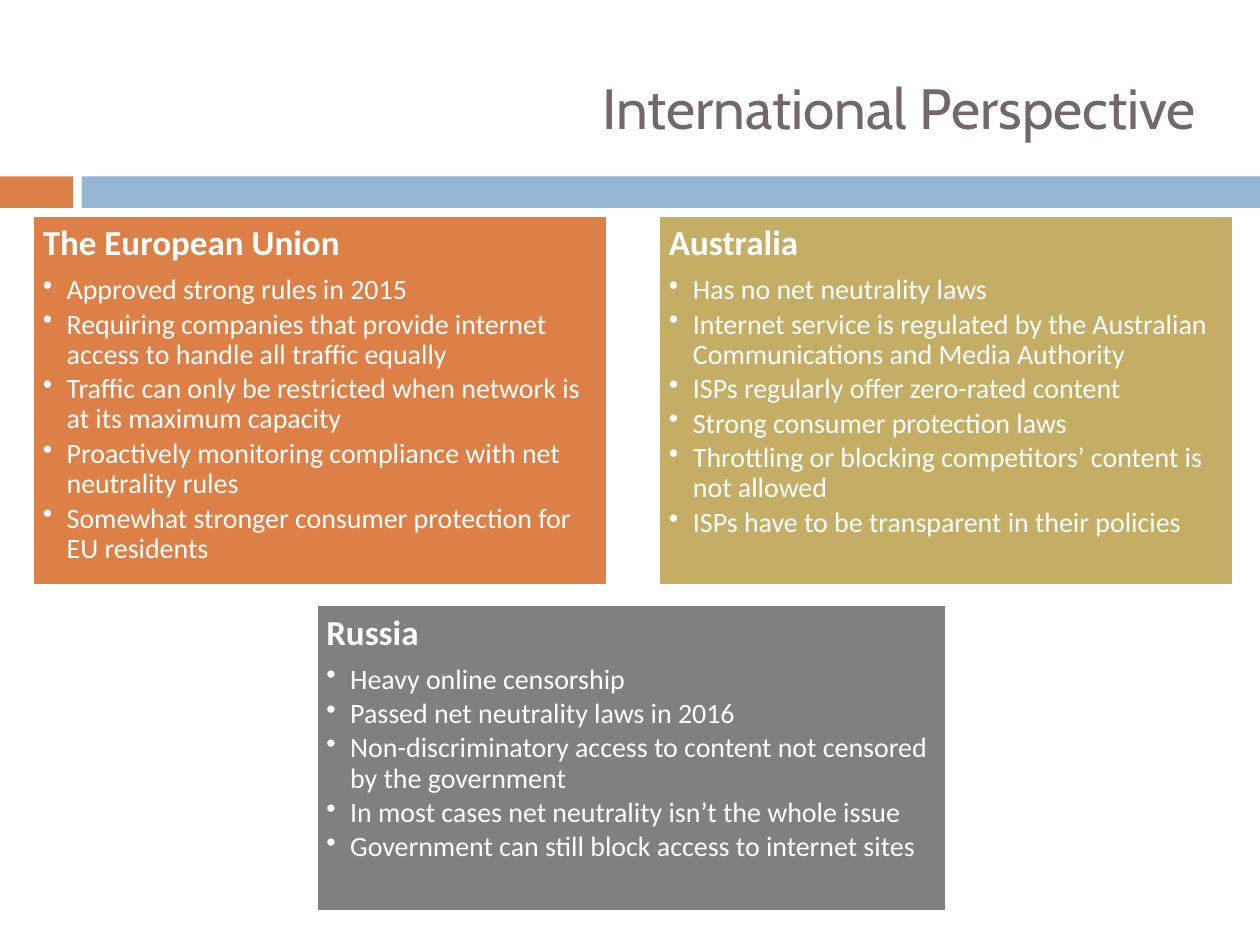
from lxml.etree import SubElement
from pptx import Presentation
from pptx.dml.color import RGBColor
from pptx.enum.shapes import MSO_SHAPE as Shape
from pptx.enum.text import MSO_ANCHOR as Anchor, PP_ALIGN as Align
from pptx.oxml.ns import qn
from pptx.util import Inches, Pt

WHITE = RGBColor(0xFF, 0xFF, 0xFF)
ORANGE = RGBColor(0xDD, 0x80, 0x47)
BLUE = RGBColor(0x94, 0xB6, 0xD2)
GOLD = RGBColor(0xC4, 0xAD, 0x64)
GRAY = RGBColor(0x80, 0x80, 0x80)
TITLE_COLOR = RGBColor(0x72, 0x68, 0x68)

BULLET_INDENT = Inches(0.19)
PANEL_INSET = Inches(0.08)

# Heading, fill, (left, top, width, height) in inches, bullets
REGIONS = [
    ("The European Union", ORANGE, (0.26, 1.71, 4.56, 2.94), [
        "Approved strong rules in 2015",
        "Requiring companies that provide internet access to handle all traffic equally",
        "Traffic can only be restricted when network is at its maximum capacity",
        "Proactively monitoring compliance with net neutrality rules",
        "Somewhat stronger consumer protection for EU residents",
    ]),
    ("Australia", GOLD, (5.23, 1.71, 4.56, 2.94), [
        "Has no net neutrality laws",
        "Internet service is regulated by the Australian Communications and Media Authority",
        "ISPs regularly offer zero-rated content",
        "Strong consumer protection laws",
        "Throttling or blocking competitors’ content is not allowed",
        "ISPs have to be transparent in their policies",
    ]),
    ("Russia", GRAY, (2.51, 4.8, 5, 2.43), [
        "Heavy online censorship",
        "Passed net neutrality laws in 2016",
        "Non-discriminatory access to content not censored by the government",
        "In most cases net neutrality isn’t the whole issue",
        "Government can still block access to internet sites",
    ]),
]


def add_rectangle(slide, box, fill):
    shape = slide.shapes.add_shape(Shape.RECTANGLE, *map(Inches, box))
    shape.shadow.inherit = False
    shape.fill.solid()
    shape.fill.fore_color.rgb = fill
    shape.line.fill.background()
    return shape


def write_paragraph(paragraph, text, font_name, size, color, bold=False):
    paragraph.text = text
    font = paragraph.runs[0].font
    font.name = font_name
    font.size = Pt(size)
    font.color.rgb = color
    font.bold = bold


def add_bullet(paragraph):
    """Give the paragraph a round bullet with a hanging indent."""
    properties = paragraph._p.get_or_add_pPr()
    properties.set("marL", str(BULLET_INDENT))
    properties.set("indent", str(-BULLET_INDENT))
    SubElement(properties, qn("a:buChar"), char="•")


def add_title(slide, text):
    box = slide.shapes.add_textbox(Inches(0.67), Inches(0.25), Inches(8.92), Inches(1.08))
    frame = box.text_frame
    frame.word_wrap = True
    frame.vertical_anchor = Anchor.MIDDLE
    frame.margin_top = Inches(0.17)
    paragraph = frame.paragraphs[0]
    paragraph.alignment = Align.RIGHT
    write_paragraph(paragraph, text, "Cabin", 32.4, TITLE_COLOR)


def add_region_panel(slide, heading, fill, box, bullets):
    panel = add_rectangle(slide, box, fill)
    panel.line.color.rgb = WHITE
    panel.line.width = Pt(1.5)
    frame = panel.text_frame
    frame.word_wrap = True
    frame.vertical_anchor = Anchor.TOP
    frame.margin_left = frame.margin_right = PANEL_INSET
    frame.margin_top = frame.margin_bottom = PANEL_INSET

    for index, text in enumerate([heading, *bullets]):
        is_heading = index == 0
        paragraph = frame.paragraphs[0] if is_heading else frame.add_paragraph()
        paragraph.alignment = Align.LEFT
        paragraph.line_spacing = 0.9
        paragraph.space_after = Pt(7 if is_heading else 2.4)
        write_paragraph(paragraph, text, "Calibri", 20 if is_heading else 16, WHITE, is_heading)
        if not is_heading:
            paragraph.level = 1
            add_bullet(paragraph)


def main():
    presentation = Presentation()
    presentation.slide_width = Inches(10)
    presentation.slide_height = Inches(7.5)
    slide = presentation.slides.add_slide(presentation.slide_layouts[6])

    add_rectangle(slide, (0, 1.4, 0.58, 0.25), ORANGE)
    add_rectangle(slide, (0.65, 1.4, 9.35, 0.25), BLUE)
    add_title(slide, "International Perspective")
    for region in REGIONS:
        add_region_panel(slide, *region)

    presentation.save("out.pptx")


if __name__ == "__main__":
    main()
